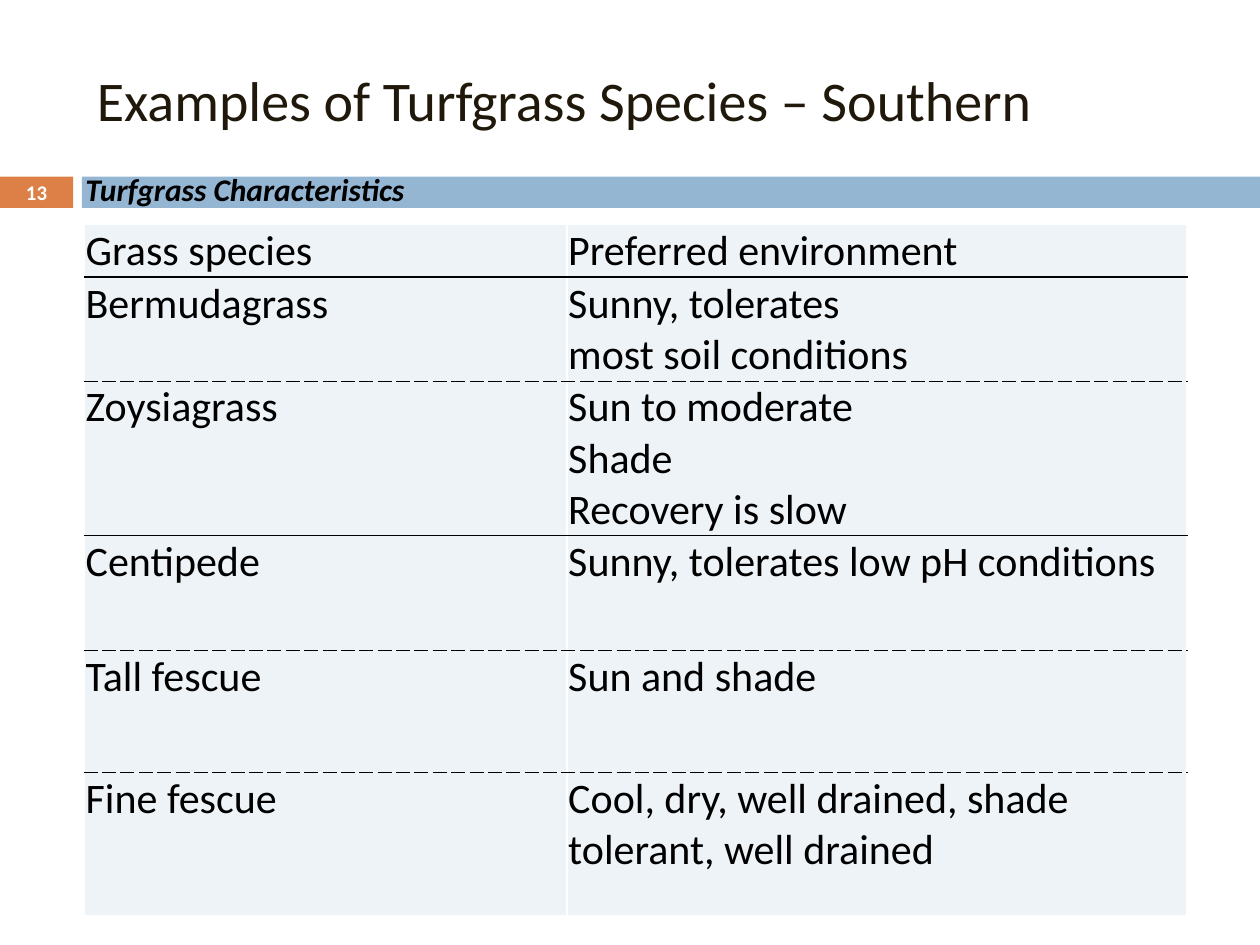
from lxml import etree
from pptx import Presentation
from pptx.dml.color import RGBColor
from pptx.enum.shapes import MSO_SHAPE
from pptx.enum.text import MSO_ANCHOR, PP_ALIGN
from pptx.oxml.ns import qn
from pptx.util import Inches, Pt

RECT = MSO_SHAPE.RECTANGLE
MID, TOP = MSO_ANCHOR.MIDDLE, MSO_ANCHOR.TOP
LEFT, MIDDLE = PP_ALIGN.LEFT, PP_ALIGN.CENTER

THEME = {
    "orange": "DD8047", "blue": "94B6D2", "pale": "EEF3F7",
    "white": "FFFFFF", "black": "000000", "dark": "20190B",
    "font": "Calibri", "title": 32, "cell": 24, "label": 18, "num": 11.9,
}

deck = Presentation()
deck.slide_width, deck.slide_height = Inches(10), Inches(7.5)
W, H = deck.slide_width, deck.slide_height
slide = deck.slides.add_slide(deck.slide_layouts[6])


def style(para, size, color, **marks):
    form = {"name": THEME["font"], "size": Pt(THEME[size]), **marks}
    for key, val in form.items():
        setattr(para.font, key, val)
    para.font.color.rgb = RGBColor.from_string(THEME[color])


def edge(cell, side, color, width, dash):
    line = etree.SubElement(cell._tc.get_or_add_tcPr(), qn("a:ln" + side),
                            w=str(Pt(width)))
    fill = etree.SubElement(line, qn("a:solidFill"))
    etree.SubElement(fill, qn("a:srgbClr"), val=THEME[color])
    etree.SubElement(line, qn("a:prstDash"), val=dash)


# Band under the title: number block, gap, long bar
band, deep = H * 0.187, H * 0.033
for left, right, color in [(0, 0.058, "orange"), (0.065, 1, "blue")]:
    bar = slide.shapes.add_shape(RECT, int(W * left), int(band),
                                 int(W * (right - left)), int(deep))
    bar.shadow.inherit = False
    bar.fill.solid()
    bar.fill.fore_color.rgb = RGBColor.from_string(THEME[color])
    bar.line.fill.background()

# Species table
ROWS = [
    (0.40, "Grass species", "Preferred environment"),
    (0.79, "Bermudagrass", "Sunny, tolerates\nmost soil conditions"),
    (1.18, "Zoysiagrass", "Sun to moderate\nShade \vRecovery is slow"),
    (0.91, "Centipede", "Sunny, tolerates low pH conditions"),
    (0.97, "Tall fescue", "Sun and shade"),
    (1.14, "Fine fescue",
     "Cool, dry, well drained, shade tolerant, well drained"),
]
COLS = [0.383, 0.492]
PLAIN = ("white", 1, "solid")
SOLID = ("black", 1, "solid")
DASH = ("black", 0.25, "sysDash")
RULES = [PLAIN, SOLID, DASH, SOLID, DASH, DASH, PLAIN]
INSET = {"margin_left": Inches(0.01), "margin_right": Inches(0.01),
         "margin_top": Inches(0.01), "margin_bottom": 0}

grid = slide.shapes.add_table(
    len(ROWS), len(COLS), int(W * 0.067), int(H * 0.2375),
    int(W * sum(COLS)), Inches(sum(row[0] for row in ROWS))).table
grid.first_row = grid.horz_banding = False
for col, share in zip(grid.columns, COLS):
    col.width = int(W * share)
for r, (tall, *words) in enumerate(ROWS):
    grid.rows[r].height = Inches(tall)
    for c, text in enumerate(words):
        cell = grid.cell(r, c)
        cell.text = text
        for key, val in INSET.items():
            setattr(cell, key, val)
        for para in cell.text_frame.paragraphs:
            style(para, "cell", "black")
        sides = {"L": PLAIN, "R": PLAIN, "T": RULES[r], "B": RULES[r + 1]}
        for side, rule in sides.items():
            edge(cell, side, *rule)
        cell.fill.solid()
        cell.fill.fore_color.rgb = RGBColor.from_string(THEME["pale"])

# Title, slide number and band label
TEXTS = [
    ("Examples of Turfgrass Species – Southern", (0.067, 0.033, 0.892, 0.144),
     "title", "dark", MID, LEFT, True, {}),
    ("13", (0, 0.185, 0.058, 0.036),
     "num", "white", MID, MIDDLE, True, {"bold": True}),
    ("Turfgrass Characteristics", (0.058, 0.173, 0.285, 0.059),
     "label", "black", TOP, LEFT, False, {"bold": True, "italic": True}),
]
for text, (x, y, w, h), size, color, anchor, align, wrap, marks in TEXTS:
    frame = slide.shapes.add_textbox(
        int(W * x), int(H * y), int(W * w), int(H * h)).text_frame
    frame.word_wrap = wrap
    frame.vertical_anchor = anchor
    para = frame.paragraphs[0]
    para.text = text
    para.alignment = align
    style(para, size, color, **marks)

deck.save("out.pptx")
